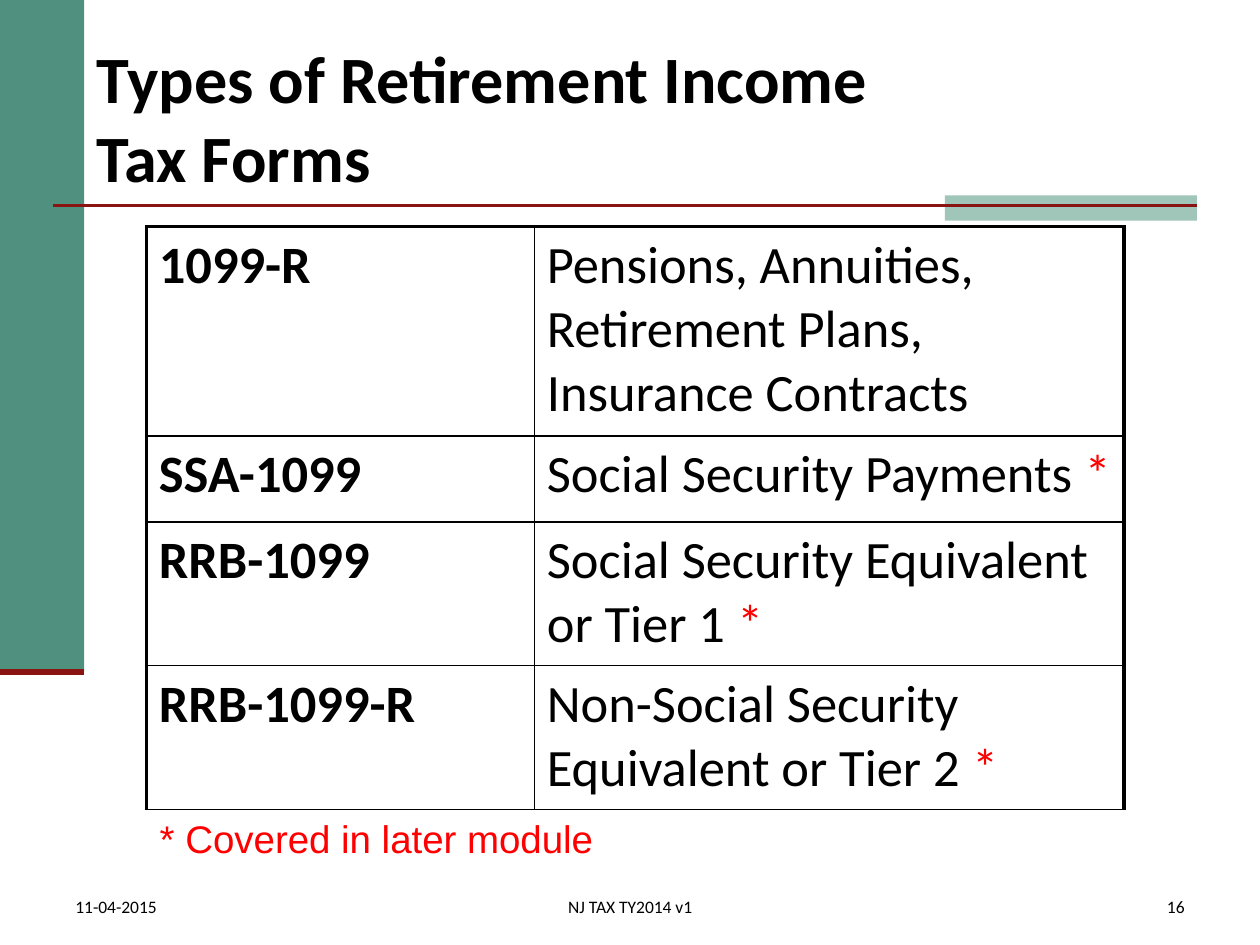
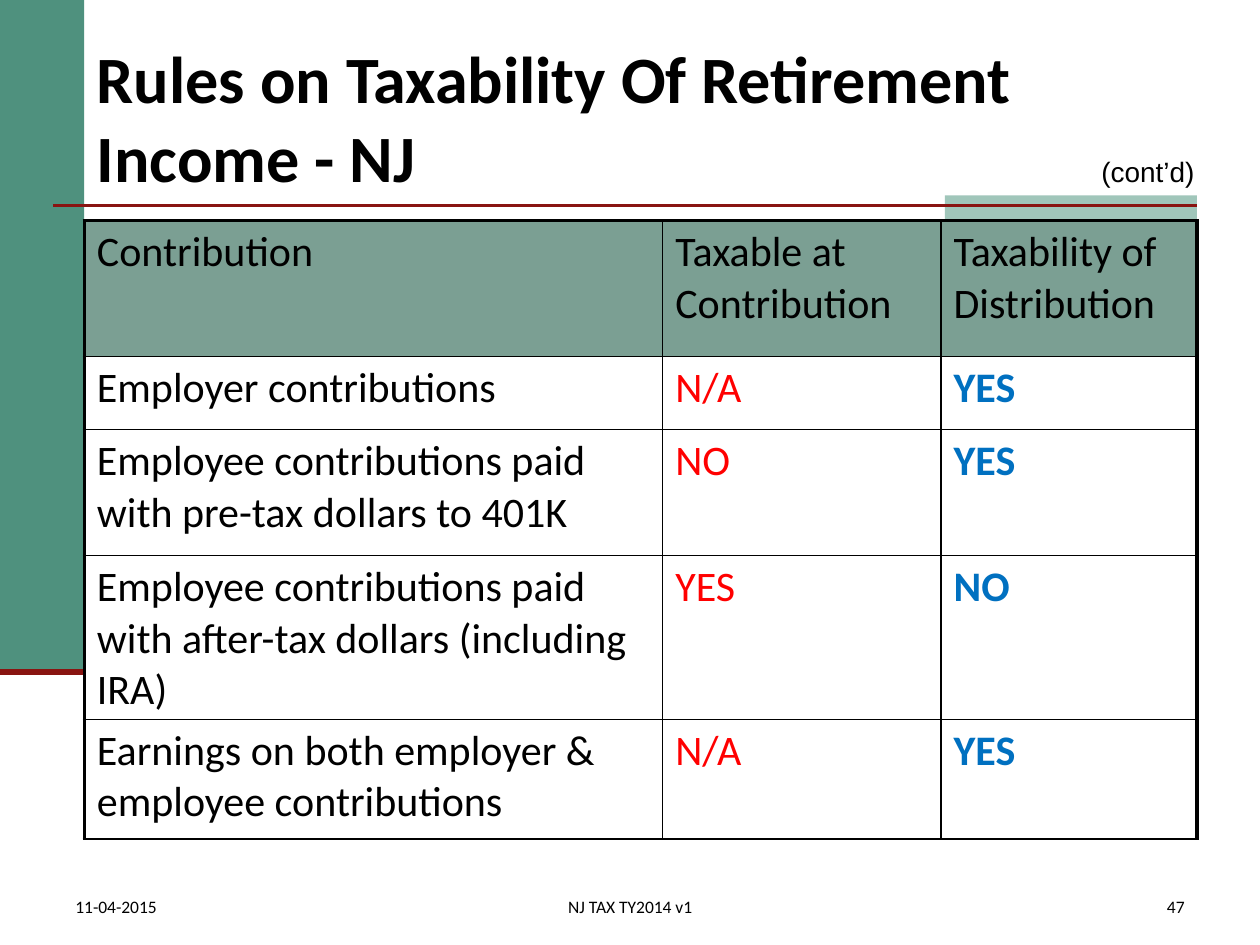
from dataclasses import dataclass, field, replace
from typing import Any, NamedTuple

from lxml import etree
from pptx import Presentation
from pptx.dml.color import RGBColor
from pptx.enum.shapes import MSO_CONNECTOR, MSO_SHAPE
from pptx.enum.text import MSO_ANCHOR, PP_ALIGN
from pptx.oxml.ns import qn
from pptx.slide import Slide
from pptx.util import Cm, Pt

RECTANGLE = MSO_SHAPE.RECTANGLE
STRAIGHT = MSO_CONNECTOR.STRAIGHT
TOP, MIDDLE, BOTTOM = MSO_ANCHOR.TOP, MSO_ANCHOR.MIDDLE, MSO_ANCHOR.BOTTOM
LEFT, CENTER, RIGHT = PP_ALIGN.LEFT, PP_ALIGN.CENTER, PP_ALIGN.RIGHT
BLANK_LAYOUT = 6


@dataclass(frozen=True)
class TextStyle:
    size: float
    color: str = "000000"
    font: str = "Calibri"
    bold: bool = False


@dataclass(frozen=True)
class Theme:
    band: str = "4F917E"
    accent: str = "A0C6BA"
    rule: str = "891411"
    header: str = "7B9F93"
    border: str = "000000"
    inner_border: float = 1
    outer_border: float = 2.25
    title: TextStyle = TextStyle(37.8, bold=True)
    footer: TextStyle = TextStyle(10)
    form: TextStyle = TextStyle(30, bold=True)
    income: TextStyle = TextStyle(30)
    star: TextStyle = TextStyle(30, "FF0000")
    footnote: TextStyle = TextStyle(22, "FF0000", "Arial")
    continued: TextStyle = TextStyle(16, font="Arial")
    body: TextStyle = TextStyle(24)
    contribution_answer: TextStyle = TextStyle(24, "FF0000")
    distribution_answer: TextStyle = TextStyle(24, "0070C0", bold=True)


THEME = Theme()


class Box(NamedTuple):
    left: float
    top: float
    width: float
    height: float

    def lengths(self) -> list[Cm]:
        return [Cm(value) for value in self]


class Bar(NamedTuple):
    box: Box
    color: str


class Rule(NamedTuple):
    left: float
    right: float
    top: float
    weight: float


class Run(NamedTuple):
    text: str
    style: TextStyle


@dataclass(frozen=True)
class Label:
    box: Box
    run: Run
    align: Any = LEFT
    anchor: Any = TOP
    wrap: bool = True


@dataclass(frozen=True)
class Grid:
    left: float
    top: float
    columns: list[float]
    rows: list[float]
    cells: list[list[list[Run]]]
    header_fill: str = ""


@dataclass(frozen=True)
class Page:
    title: str
    number: int
    grid: Grid
    labels: list[Label] = field(default_factory=list)


BARS = [
    Bar(Box(0, 0, 1.7, 13.55), THEME.band),
    Bar(Box(19.05, 3.94, 5.08, 0.51), THEME.accent),
]
RULES = [Rule(1.07, 24.13, 4.14, 1.5), Rule(0, 1.7, 13.55, 3.5)]
TITLE = Label(Box(1.7, 0.76, 22.43, 3.18), Run("", THEME.title), anchor=MIDDLE)
FOOTERS = [
    Label(Box(1.27, 17.78, 5.51, 0.84), Run("11-04-2015", THEME.footer), LEFT, BOTTOM),
    Label(Box(8.41, 17.78, 8.59, 0.84), Run("NJ TAX TY2014 v1", THEME.footer), CENTER, BOTTOM),
]
PAGE_NUMBER = Label(Box(18.85, 17.78, 5.28, 0.84), Run("", THEME.footer), RIGHT, BOTTOM)


def form_row(form: str, income: str, covered_later: bool = True) -> list[list[Run]]:
    star = [Run("*", THEME.star)] if covered_later else []
    gap = " " if covered_later else ""
    return [[Run(form, THEME.form)], [Run(income + gap, THEME.income), *star]]


def rule_row(contribution: str, taxable: str, distribution: str) -> list[list[Run]]:
    return [
        [Run(contribution, THEME.body)],
        [Run(taxable, THEME.contribution_answer)],
        [Run(distribution, THEME.distribution_answer)],
    ]


def header_row(*headings: str) -> list[list[Run]]:
    return [[Run(heading, THEME.body)] for heading in headings]


PAGES = [
    Page(
        "Types of Retirement Income \nTax Forms",
        16,
        Grid(
            2.95, 4.57, [7.82, 11.89], [4.22, 1.73, 2.9, 2.9],
            [
                form_row("1099-R", "Pensions, Annuities, Retirement Plans, Insurance Contracts", False),
                form_row("SSA-1099", "Social Security Payments"),
                form_row("RRB-1099", "Social Security Equivalent or Tier 1"),
                form_row("RRB-1099-R", "Non-Social Security Equivalent or Tier 2"),
            ],
        ),
        [Label(Box(2.97, 16.31, 9.37, 1.19), Run("* Covered in later module", THEME.footnote), wrap=False)],
    ),
    Page(
        "Rules on Taxability Of Retirement Income - NJ",
        47,
        Grid(
            1.7, 4.45, [11.66, 5.61, 5.16], [2.74, 1.47, 2.54, 3.3, 2.41],
            [
                header_row("Contribution", "Taxable at Contribution", "Taxability of Distribution"),
                rule_row("Employer contributions", "N/A", "YES"),
                rule_row("Employee contributions paid with pre-tax dollars to 401K", "NO", "YES"),
                rule_row("Employee contributions paid with after-tax dollars (including IRA)", "YES", "NO"),
                rule_row("Earnings on both employer & employee contributions", "N/A", "YES"),
            ],
            THEME.header,
        ),
        [Label(Box(21.92, 3, 2.41, 0.94), Run("(cont’d)", THEME.continued), RIGHT, wrap=False)],
    ),
]


def apply_format(target: Any, values: dict[str, Any]) -> None:
    for name, value in values.items():
        setattr(target, name, value)


def write_run(paragraph: Any, run: Run) -> None:
    for index, line in enumerate(run.text.split("\n")):
        if index:
            paragraph.add_line_break()
        text_run = paragraph.add_run()
        text_run.text = line
        style = run.style
        apply_format(text_run.font, {"name": style.font, "size": Pt(style.size), "bold": style.bold})
        text_run.font.color.rgb = RGBColor.from_string(style.color)


def draw_label(slide: Slide, label: Label) -> None:
    frame = slide.shapes.add_textbox(*label.box.lengths()).text_frame
    apply_format(frame, {"word_wrap": label.wrap, "vertical_anchor": label.anchor})
    paragraph = frame.paragraphs[0]
    paragraph.alignment = label.align
    write_run(paragraph, label.run)


def draw_bar(slide: Slide, bar: Bar) -> None:
    shape = slide.shapes.add_shape(RECTANGLE, *bar.box.lengths())
    shape.shadow.inherit = False
    shape.fill.solid()
    shape.fill.fore_color.rgb = RGBColor.from_string(bar.color)
    shape.line.fill.background()


def draw_rule(slide: Slide, rule: Rule) -> None:
    connector = slide.shapes.add_connector(
        STRAIGHT, Cm(rule.left), Cm(rule.top), Cm(rule.right), Cm(rule.top)
    )
    connector.line.color.rgb = RGBColor.from_string(THEME.rule)
    connector.line.width = Pt(rule.weight)
    etree.SubElement(connector.element.spPr, qn("a:effectLst"))


def draw_borders(cell: Any, outer_sides: dict[str, bool]) -> None:
    properties = cell._tc.get_or_add_tcPr()
    for side, outer in outer_sides.items():
        weight = THEME.outer_border if outer else THEME.inner_border
        line = etree.SubElement(properties, qn(f"a:ln{side}"), w=str(Pt(weight)))
        fill = etree.SubElement(line, qn("a:solidFill"))
        etree.SubElement(fill, qn("a:srgbClr"), val=THEME.border)


def draw_grid(slide: Slide, grid: Grid) -> None:
    box = Box(grid.left, grid.top, sum(grid.columns), sum(grid.rows))
    table = slide.shapes.add_table(len(grid.rows), len(grid.columns), *box.lengths()).table
    apply_format(table, {"first_row": False, "horz_banding": False})
    for column, width in zip(table.columns, grid.columns):
        column.width = Cm(width)
    last_column = len(grid.columns) - 1
    for row_index, (row, height) in enumerate(zip(table.rows, grid.rows)):
        row.height = Cm(height)
        for column_index, cell in enumerate(row.cells):
            for run in grid.cells[row_index][column_index]:
                write_run(cell.text_frame.paragraphs[0], run)
            draw_borders(cell, {
                "L": column_index == 0,
                "R": column_index == last_column,
                "T": row_index == 0,
                "B": False,
            })
            if grid.header_fill and row_index == 0:
                cell.fill.solid()
                cell.fill.fore_color.rgb = RGBColor.from_string(grid.header_fill)
            else:
                cell.fill.background()


def draw_page(slide: Slide, page: Page) -> None:
    for bar in BARS:
        draw_bar(slide, bar)
    for rule in RULES:
        draw_rule(slide, rule)
    draw_label(slide, replace(TITLE, run=Run(page.title, THEME.title)))
    draw_grid(slide, page.grid)
    number = replace(PAGE_NUMBER, run=Run(str(page.number), THEME.footer))
    for label in [*page.labels, *FOOTERS, number]:
        draw_label(slide, label)


def main() -> None:
    presentation = Presentation()
    apply_format(presentation, {"slide_width": Cm(25.4), "slide_height": Cm(19.05)})
    for page in PAGES:
        draw_page(presentation.slides.add_slide(presentation.slide_layouts[BLANK_LAYOUT]), page)
    presentation.save("out.pptx")


if __name__ == "__main__":
    main()
